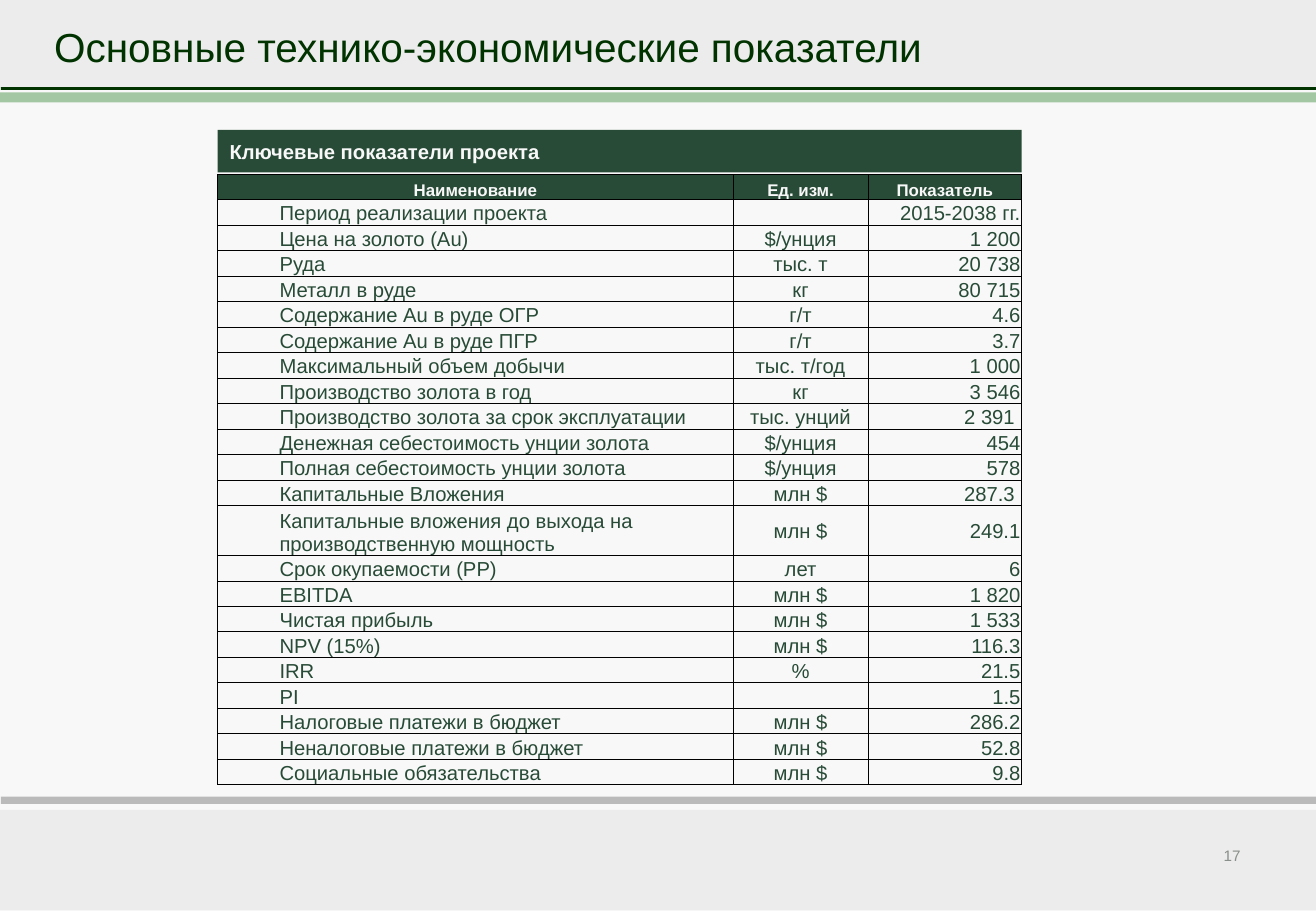
import pptx
import pptx.util
import pptx.dml.color
import pptx.enum.shapes
import pptx.enum.text
import pptx.oxml.ns
from lxml import etree

Pt = pptx.util.Pt
RGBColor = pptx.dml.color.RGBColor
SHAPE = pptx.enum.shapes.MSO_SHAPE
ALIGN = pptx.enum.text.PP_ALIGN
ANCHOR = pptx.enum.text.MSO_ANCHOR
qn = pptx.oxml.ns.qn

PAPER = RGBColor(0xF8, 0xF8, 0xF8)
BAND = RGBColor(0xEC, 0xEC, 0xEC)
GREEN = RGBColor(0x00, 0x66, 0x00)
DARK_GREEN = RGBColor(0x00, 0x33, 0x00)
TABLE_GREEN = RGBColor(0x28, 0x4B, 0x37)
GRAY = RGBColor(0xBA, 0xBA, 0xBA)
NUMBER_GRAY = RGBColor(0x89, 0x8F, 0x89)


def add_block(s, shape, left, top, width, height, color):
    sp = s.shapes.add_shape(shape, Pt(left), Pt(top), Pt(width), Pt(height))
    sp.shadow.inherit = False
    sp.fill.solid()
    sp.fill.fore_color.rgb = color
    sp.line.fill.background()
    return sp


def write(tf, text, size, color, bold=False, align=ALIGN.LEFT):
    p = tf.paragraphs[0]
    p.alignment = align
    r = p.add_run()
    r.text = text
    r.font.color.rgb = color
    for name, value in {"name": "Arial", "size": Pt(size), "bold": bold}.items():
        setattr(r.font, name, value)
    return p


prs = pptx.Presentation()
prs.slide_width, prs.slide_height = Pt(780), Pt(540)
s = prs.slides.add_slide(prs.slide_layouts[6])
s.background.fill.solid()
s.background.fill.fore_color.rgb = PAPER

# Header and footer bands
bands = [
    (0, 481, 58.5, BAND),
    (0, 0, 52, BAND),
    (0, 54.8, 6, GREEN),
    (0.5, 51.7, 1.6, DARK_GREEN),
    (0.5, 472.2, 4.4, GRAY),
    (0, 480, 2, BAND),
]
for left, top, height, color in bands:
    sp = add_block(s, SHAPE.RECTANGLE, left, top, 780 - left, height, color)
    if color == GREEN:
        rgb = sp.fill._xPr.find(".//" + qn("a:srgbClr"))
        etree.SubElement(rgb, qn("a:alpha"), val="34000")

# Slide number
tf = s.shapes.add_textbox(Pt(697), Pt(492.5), Pt(45.4), Pt(28.8)).text_frame
tf.word_wrap = True
tf.vertical_anchor = ANCHOR.MIDDLE
write(tf, "17", 9, NUMBER_GRAY, align=ALIGN.RIGHT)

# Title
tf = s.shapes.add_textbox(Pt(25), Pt(7.2), Pt(745), Pt(36)).text_frame
tf.word_wrap = True
tf.margin_top = Pt(6)
write(tf, "Основные технико-экономические показатели", 24, DARK_GREEN)

# Table of indicators
rows = [
    ("Наименование", "Ед. изм.", "Показатель"),
    ("Период реализации проекта", "", "2015-2038 гг."),
    ("Цена на золото (Au)", "$/унция", "1 200"),
    ("Руда", "тыс. т", " 20 738"),
    ("Металл в руде", "кг", " 80 715"),
    ("Содержание Au в руде ОГР", "г/т", " 4.6"),
    ("Содержание Au в руде ПГР", "г/т", " 3.7"),
    ("Максимальный объем добычи", "тыс. т/год", " 1 000"),
    ("Производство золота в год", "кг", " 3 546"),
    ("Производство золота за срок эксплуатации", "тыс. унций", "2 391 "),
    ("Денежная себестоимость унции золота", "$/унция", "454"),
    ("Полная себестоимость унции золота", "$/унция", "578"),
    ("Капитальные Вложения", "млн $", "287.3 "),
    ("Капитальные вложения до выхода на производственную мощность", "млн $", "249.1"),
    ("Срок окупаемости (PP)", "лет", "6"),
    ("EBITDA", "млн $", "1 820"),
    ("Чистая прибыль", "млн $", "1 533"),
    ("NPV (15%)", "млн $", "116.3"),
    ("IRR", "%", "21.5"),
    ("PI", "", "1.5"),
    ("Налоговые платежи в бюджет", "млн $", "286.2"),
    ("Неналоговые платежи в бюджет", "млн $", "52.8"),
    ("Социальные обязательства", "млн $", "9.8"),
]
TALL_ROW = 13
aligns = [ALIGN.LEFT, ALIGN.CENTER, ALIGN.RIGHT]
margins = {"margin_left": 0.7, "margin_right": 0.7, "margin_top": 0.7, "margin_bottom": 0}

table = s.shapes.add_table(len(rows), 3, Pt(129), Pt(103.4), Pt(476.5), Pt(359)).table
table.first_row = table.horz_banding = False
for column, width in zip(table.columns, [305.5, 80, 91]):
    column.width = Pt(width)

for i, row in enumerate(rows):
    table.rows[i].height = Pt(29.2 if i == TALL_ROW else 15)
    for j, text in enumerate(row):
        cell = table.cell(i, j)
        for name, value in margins.items():
            setattr(cell, name, Pt(value))
        cell.vertical_anchor = ANCHOR.MIDDLE if i == TALL_ROW and j else ANCHOR.BOTTOM

        # Cell borders come before the fill
        tc_pr = cell._tc.get_or_add_tcPr()
        for side in ("lnL", "lnR", "lnT", "lnB"):
            ln = etree.SubElement(tc_pr, qn("a:" + side), w="6350")
            fill = etree.SubElement(ln, qn("a:solidFill"))
            etree.SubElement(fill, qn("a:srgbClr"), val="000000")

        if i == 0:
            cell.fill.solid()
            cell.fill.fore_color.rgb = TABLE_GREEN
            write(cell.text_frame, text, 10, PAPER, True, ALIGN.CENTER)
            continue
        cell.fill.background()
        if not text:
            p = cell.text_frame.paragraphs[0]
            etree.SubElement(p._p, qn("a:endParaRPr"), sz="1200")
            continue
        p = write(cell.text_frame, text, 12, TABLE_GREEN, align=aligns[j])
        if j == 0:
            p.level = 1
            p._p.get_or_add_pPr().set("marL", str(Pt(36)))
            p._p.get_or_add_pPr().set("indent", "0")

# Table heading
sp = add_block(s, SHAPE.PENTAGON, 129, 77, 476.5, 25.2, TABLE_GREEN)
sp.adjustments[0] = 0
sp.text_frame.word_wrap = True
sp.text_frame.vertical_anchor = ANCHOR.MIDDLE
write(sp.text_frame, "Ключевые показатели проекта", 12, PAPER, True)

prs.save("out.pptx")
